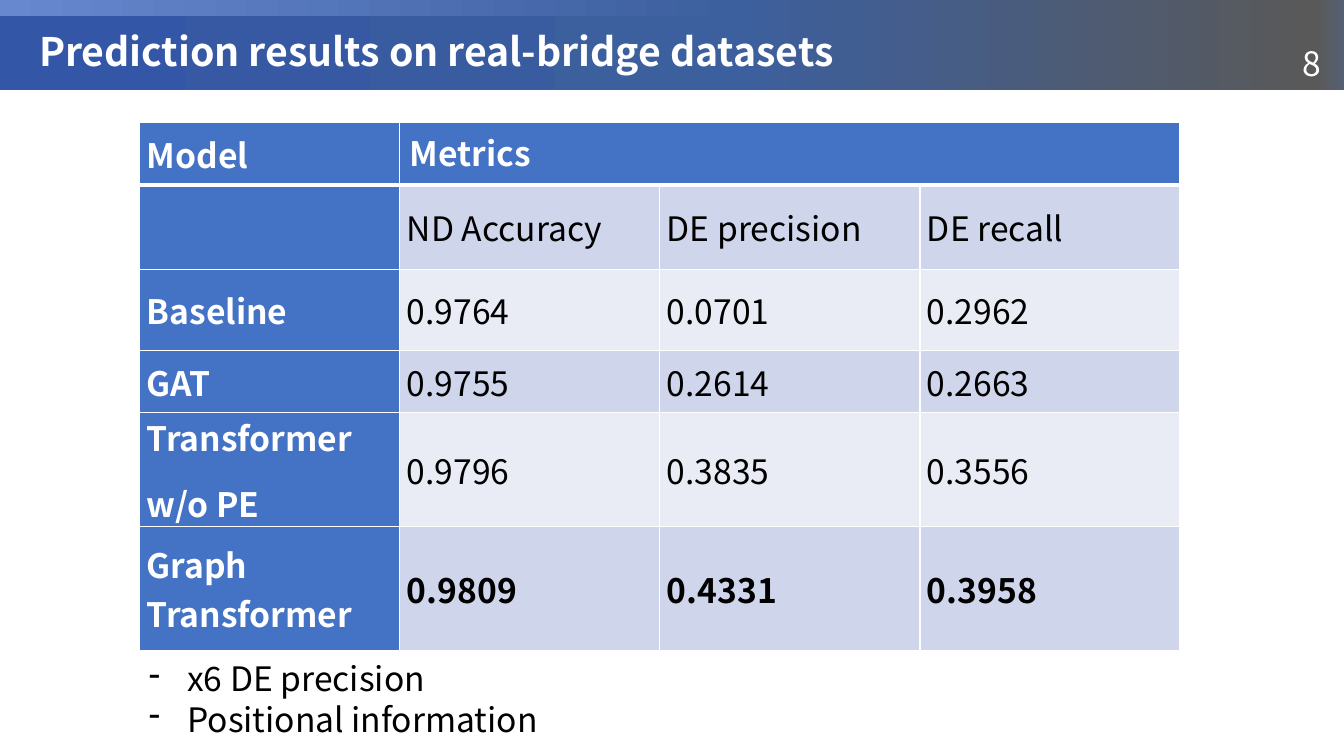
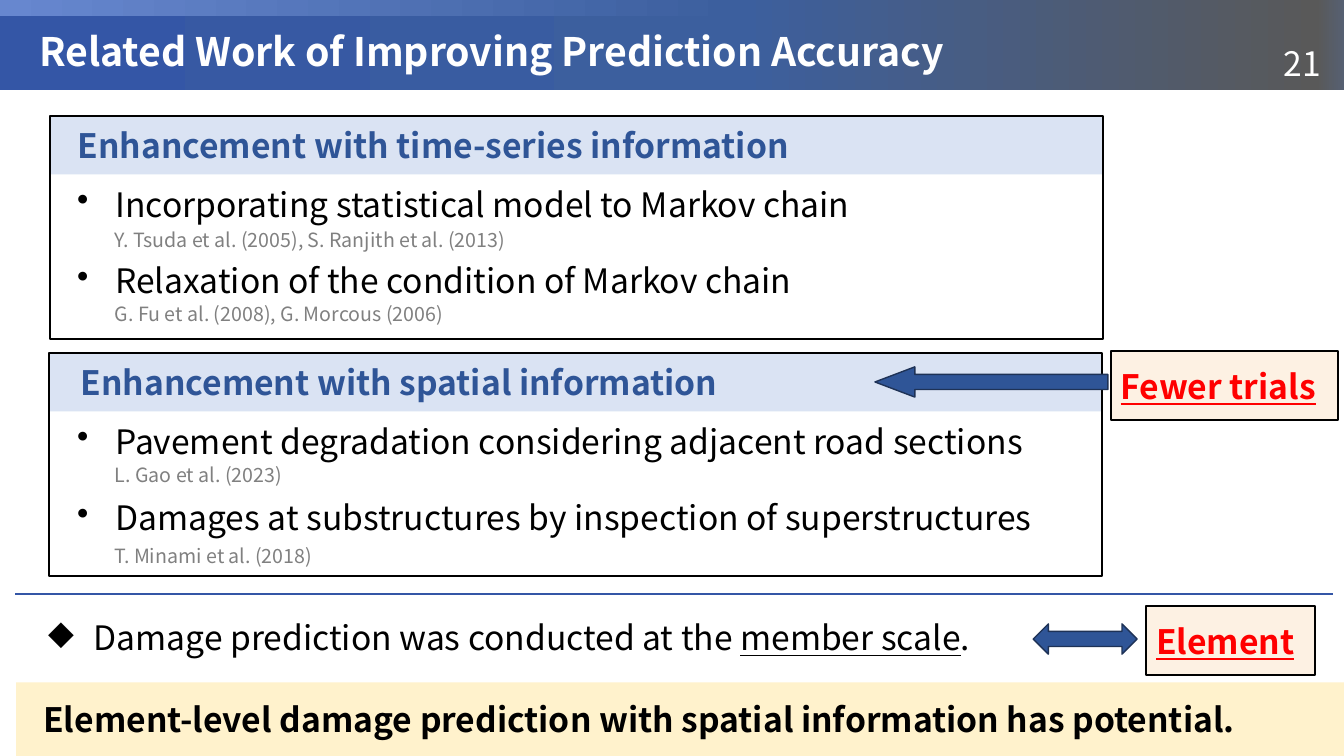
from lxml import etree
from pptx import Presentation
from pptx.dml.color import RGBColor
from pptx.enum.shapes import MSO_CONNECTOR, MSO_SHAPE
from pptx.enum.text import MSO_ANCHOR, PP_ALIGN
from pptx.oxml.ns import qn
from pptx.util import Emu, Inches, Pt

RECT = MSO_SHAPE.RECTANGLE
LEFT_ARROW, DOUBLE_ARROW = MSO_SHAPE.LEFT_ARROW, MSO_SHAPE.LEFT_RIGHT_ARROW
STRAIGHT = MSO_CONNECTOR.STRAIGHT
TOP, MIDDLE = MSO_ANCHOR.TOP, MSO_ANCHOR.MIDDLE
LEFT, RIGHT, JUSTIFY = PP_ALIGN.LEFT, PP_ALIGN.RIGHT, PP_ALIGN.JUSTIFY

SLIDE_W, SLIDE_H = Emu(12192000), Emu(6858000)
FONT = "Noto Sans CJK JP"
WHITE, BLACK, GRAY, RED = "FFFFFF", "000000", "808080", "FF0000"
NAVY, ARROW_EDGE, RULE = "2F5597", "1E3256", "3456A6"
PALE_BLUE, PALE_ORANGE, PALE_YELLOW = "DAE3F3", "FDF1E3", "FFF2CC"
TABLE_HEAD, TABLE_BANDS = "4472C4", ("CFD5EA", "E9EBF5")
BAND_STOPS = [(55, "3C5F9E"), (98, "595959"), (100, "566072")]

# Panel layout, in percent of the slide
PANEL_W, PANEL_H, HEADING_H = 78.3, 29.47, 7.73
ITEM_LEFT, ITEM_TOP, ITEM_STEP, SOURCE_LEFT = 5, 8.3, 10.13, 7.8


def rgb(value):
    return RGBColor.from_string(value)


def across(percent):
    return Emu(round(SLIDE_W * percent / 100))


def down(percent):
    return Emu(round(SLIDE_H * percent / 100))


def area(left, top, width, height):
    """Turn percentages of the slide into lengths."""
    return across(left), down(top), across(width), down(height)


def style(paragraph, size=24, color=BLACK, bold=False, underline=False, align=LEFT):
    paragraph.alignment = align
    font = paragraph.font
    font.name, font.size, font.bold = FONT, Pt(size), bold
    font.underline = underline
    font.color.rgb = rgb(color)


def set_bullet(paragraph, mark, indent=0.38):
    properties = paragraph._p.get_or_add_pPr()
    properties.set("marL", str(Inches(indent)))
    properties.set("indent", str(-Inches(indent)))
    etree.SubElement(properties, qn("a:buChar"), char=mark)


def write(frame, lines, bullet=None, indent=0.38, **look):
    """Fill a frame; a line is a string or a list of (text, underlined) runs."""
    frame.word_wrap = True
    for index, line in enumerate(lines):
        paragraph = frame.add_paragraph() if index else frame.paragraphs[0]
        if bullet:
            set_bullet(paragraph, bullet, indent)
        style(paragraph, **look)
        if isinstance(line, str):
            paragraph.add_run().text = line
            continue
        for text, underlined in line:
            run = paragraph.add_run()
            run.text = text
            run.font.underline = underlined


def add_text(slide, place, *lines, anchor=TOP, **look):
    frame = slide.shapes.add_textbox(*area(*place)).text_frame
    frame.vertical_anchor = anchor
    write(frame, lines, **look)
    return frame


def add_block(slide, place, fill=None, edge=None, edge_width=1.5, preset=RECT):
    block = slide.shapes.add_shape(preset, *area(*place))
    block.shadow.inherit = False
    if fill:
        block.fill.solid()
        block.fill.fore_color.rgb = rgb(fill)
    else:
        block.fill.background()
    if edge:
        block.line.color.rgb = rgb(edge)
        block.line.width = Pt(edge_width)
    else:
        block.line.fill.background()
    return block


def add_label(slide, place, text, inset=0.75, edge=None, fill=None, **look):
    """Filled rectangle with left-aligned text, inset in percent of the width."""
    frame = add_block(slide, place, fill, edge).text_frame
    frame.vertical_anchor = MIDDLE
    frame.margin_left = across(inset)
    write(frame, [text], bold=True, **look)


def add_gradient_band(slide, place, first_color):
    band = add_block(slide, place, WHITE)
    band.fill.gradient()
    band.fill.gradient_angle = 0
    stops = band._element.spPr.find(qn("a:gradFill")).find(qn("a:gsLst"))
    for stop in list(stops):
        stops.remove(stop)
    for position, color in [(0, first_color)] + BAND_STOPS:
        stop = etree.SubElement(stops, qn("a:gs"), pos=str(position * 1000))
        etree.SubElement(stop, qn("a:srgbClr"), val=color)


def add_arrow(slide, place, preset):
    return add_block(slide, place, NAVY, ARROW_EDGE, 1, preset)


def add_rule(slide, start, end, top):
    rule = slide.shapes.add_connector(
        STRAIGHT, across(start), down(top), across(end), down(top))
    rule.line.color.rgb = rgb(RULE)
    rule.line.width = Pt(1.5)
    etree.SubElement(rule._element.spPr, qn("a:effectLst"))


def start_slide(deck, title, number):
    slide = deck.slides.add_slide(deck.slide_layouts[6])
    add_gradient_band(slide, (0, 0, 100, 10.8), "6787CF")
    add_gradient_band(slide, (0, 2.13, 100, 9.73), "3456A6")
    add_text(slide, (93.23, 5.07, 5.78, 6), number, color=WHITE, align=RIGHT)
    heading = add_text(slide, (2.18, 3.2, 90.15, 7.87), title, anchor=MIDDLE,
                       size=28, color=WHITE, bold=True)
    heading.paragraphs[0].line_spacing = 0.9
    return slide


def set_borders(cell, bottom=1, top=1):
    properties = cell._tc.get_or_add_tcPr()
    widths = {"a:lnL": 1, "a:lnR": 1, "a:lnT": top, "a:lnB": bottom}
    for index, (side, width) in enumerate(widths.items()):
        line = etree.Element(qn(side), w=str(Pt(width)))
        fill = etree.SubElement(line, qn("a:solidFill"))
        etree.SubElement(fill, qn("a:srgbClr"), val=WHITE)
        properties.insert(index, line)


def fill_cell(cell, text, fill, spaced=True, **look):
    cell.fill.solid()
    cell.fill.fore_color.rgb = rgb(fill)
    if not text:
        return
    write(cell.text_frame, text.split("\n"), **look)
    if spaced:
        cell.vertical_anchor = MIDDLE
        cell.margin_left = cell.margin_right = Inches(0.07)
        cell.margin_top = cell.margin_bottom = 0
        for paragraph in cell.text_frame.paragraphs:
            paragraph.alignment = JUSTIFY
            paragraph.space_before = paragraph.space_after = Pt(6)


def add_results_table(slide, left, top, column_width, heights, rows):
    columns = len(rows[0])
    place = area(left, top, column_width * columns, sum(heights))
    table = slide.shapes.add_table(len(rows), columns, *place).table
    for column in table.columns:
        column.width = across(column_width)
    for row, height in zip(table.rows, heights):
        row.height = down(height)
    last = len(rows) - 1
    for r, texts in enumerate(rows):
        for c, text in enumerate(texts):
            is_head = r == 0 or c == 0
            fill_cell(table.cell(r, c), text,
                      TABLE_HEAD if is_head else TABLE_BANDS[(r - 1) % 2],
                      spaced=(r, c) != (0, 1),
                      color=WHITE if is_head else BLACK,
                      bold=is_head or r == last)
            set_borders(table.cell(r, c), bottom=3 if r == 0 else 1,
                        top=3 if r == 1 else 1)
    table.cell(0, 1).merge(table.cell(0, columns - 1))


def add_panel(slide, left, top, heading, inset, items):
    """Framed list; an item is (statement, source, drop to the source)."""
    add_label(slide, (left, top, PANEL_W, HEADING_H), heading, inset,
              fill=PALE_BLUE, color=NAVY)
    for index, (statement, source, drop) in enumerate(items):
        item_top = top + ITEM_TOP + index * ITEM_STEP
        add_text(slide, (ITEM_LEFT, item_top, 77, 6.67), statement, bullet="•")
        add_text(slide, (SOURCE_LEFT, item_top + drop, 47.5, 4.53), source,
                 size=14, color=GRAY)
    add_block(slide, (left, top, PANEL_W, PANEL_H), edge=BLACK)


def add_callout(slide, place, text):
    add_label(slide, place, text, fill=PALE_ORANGE, edge=BLACK, color=RED,
              underline=True)


def build_results(deck):
    slide = start_slide(deck, "Prediction results on real-bridge datasets", "8")
    add_results_table(
        slide, 10.4, 16.2, 19.35, [8.27, 11.2, 10.67, 8.27, 15.07, 16.4],
        [["Model", "Metrics", "", ""],
         ["", "ND Accuracy", "DE precision", "DE recall"],
         ["Baseline", "0.9764", "0.0701", "0.2962"],
         ["GAT", "0.9755", "0.2614", "0.2663"],
         ["Transformer\nw/o PE", "0.9796", "0.3835", "0.3556"],
         ["Graph Transformer", "0.9809", "0.4331", "0.3958"]])
    add_text(slide, (10.35, 86.4, 45.45, 12.13),
             "x6 DE precision", "Positional information", bullet="-")


def build_related_work(deck):
    slide = start_slide(deck, "Related Work of Improving Prediction Accuracy", "21")
    add_panel(slide, 3.75, 15.33, "Enhancement with time-series information", 2.03, [
        ("Incorporating statistical model to Markov chain",
         "Y. Tsuda et al. (2005), S. Ranjith et al. (2013)", 5.87),
        ("Relaxation of the condition of Markov chain",
         "G. Fu et al. (2008), G. Morcous (2006)", 5.47)])
    add_panel(slide, 3.68, 46.67, "Enhancement with spatial information", 2.33, [
        ("Pavement degradation considering adjacent road sections",
         "L. Gao et al. (2023)", 5.6),
        ("Damages at substructures by inspection of superstructures",
         "T. Minami et al. (2018)", 6.13)])
    add_callout(slide, (82.65, 46.4, 16.88, 9.2), "Fewer trials")
    trials_arrow = add_arrow(slide, (65.1, 48.53, 17.33, 4), LEFT_ARROW)
    trials_arrow.adjustments[1] = 1.32

    add_rule(slide, 1.13, 99.15, 78.53)
    add_text(slide, (2.85, 80.93, 77, 6.67),
             [("Damage prediction was conducted at the ", False),
              ("member scale", True), (".", False)], bullet="◆", indent=0.45)
    add_arrow(slide, (76.88, 82.53, 7.73, 4), DOUBLE_ARROW)
    add_callout(slide, (85.28, 80.13, 12.6, 9.2), "Element")
    add_label(slide, (1.2, 90.27, 98.8, 9.73),
              "Element-level damage prediction with spatial information has potential.",
              2.03, fill=PALE_YELLOW)


def main():
    deck = Presentation()
    deck.slide_width, deck.slide_height = SLIDE_W, SLIDE_H
    build_results(deck)
    build_related_work(deck)
    deck.save("out.pptx")


if __name__ == "__main__":
    main()
